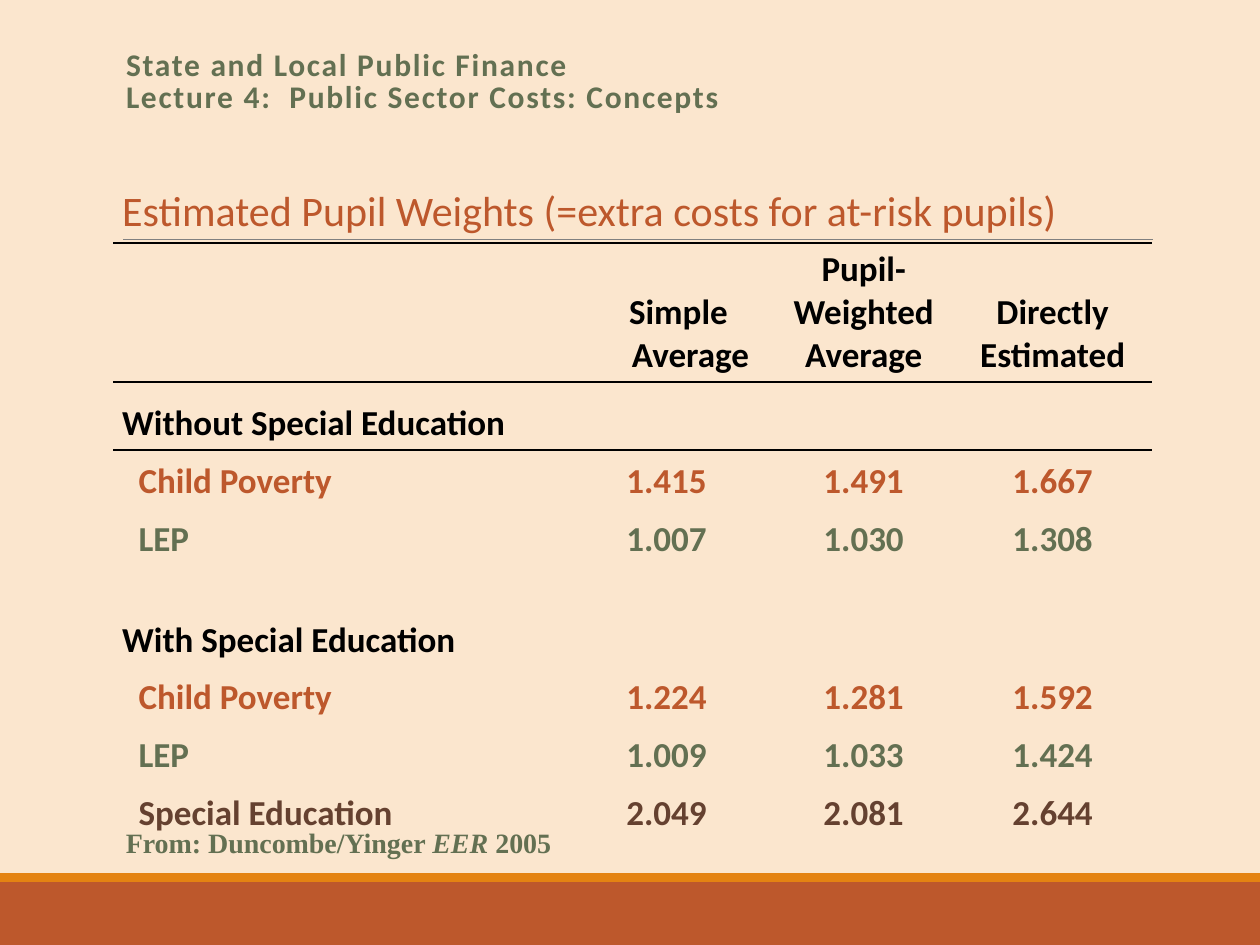
import pptx
import pptx.dml.color
import pptx.enum.shapes
import pptx.enum.text
import pptx.oxml.ns
import pptx.oxml.xmlchemy
import pptx.util

THEME = {
    "background": "FBE6CE",
    "rust": "BD582C",
    "orange": "E48312",
    "green": "637052",
    "brown": "654130",
    "black": "000000",
    "grey": "808080",
    "font": "Calibri",
    "source_font": "Times New Roman",
    "lecture_size": 18,
    "heading_size": 24,
    "table_size": 20,
    "source_size": 16,
}
ALIGN = pptx.enum.text.PP_ALIGN
ANCHOR = pptx.enum.text.MSO_ANCHOR


def theme_color(name):
    return pptx.dml.color.RGBColor.from_string(THEME[name])


def style(paragraph, size, color, bold=True, font="font"):
    paragraph.font.name = THEME[font]
    paragraph.font.size = pptx.util.Pt(THEME[size])
    paragraph.font.bold = bold
    paragraph.font.color.rgb = theme_color(color)


presentation = pptx.Presentation()
presentation.slide_width = pptx.util.Inches(10)
presentation.slide_height = pptx.util.Inches(7.5)
column = presentation.slide_width / 100
row = presentation.slide_height / 75
left, right = 9 * column, 91.5 * column

slide = presentation.slides.add_slide(presentation.slide_layouts[5])
slide.background.fill.solid()
slide.background.fill.fore_color.rgb = theme_color("background")

for top, height, color in ((70, 5, "rust"), (69.3, 0.7, "orange")):
    band = slide.shapes.add_shape(
        pptx.enum.shapes.MSO_SHAPE.RECTANGLE,
        0, int(top * row), presentation.slide_width, int(height * row))
    band.shadow.inherit = False
    band.fill.solid()
    band.fill.fore_color.rgb = theme_color(color)
    band.line.fill.background()

rule = slide.shapes.add_connector(
    pptx.enum.shapes.MSO_CONNECTOR.STRAIGHT,
    int(9.8 * column), int(19 * row), int(right), int(19 * row))
rule.line.color.rgb = theme_color("grey")
rule.line.width = pptx.util.Pt(0.5)
rule._element.spPr.append(pptx.oxml.xmlchemy.OxmlElement("a:effectLst"))

title = slide.shapes.title
title.left, title.top = int(left), int(3.3 * row)
title.width, title.height = int(right - left), int(6.5 * row)
title.text_frame.text = "State and Local Public Finance\vLecture 4:  Public Sector Costs: Concepts"
title.text_frame.auto_size = pptx.enum.text.MSO_AUTO_SIZE.NONE
title.text_frame.vertical_anchor = ANCHOR.MIDDLE
paragraph = title.text_frame.paragraphs[0]
paragraph.alignment = ALIGN.LEFT
paragraph.line_spacing = 0.85
style(paragraph, "lecture_size", "green")
for run in paragraph.runs:
    run._r.get_or_add_rPr().set("spc", "100")

rows = [
    ("heading", "rust", ["Estimated Pupil Weights (=extra costs for at-risk pupils)"]),
    ("header", "black", ["", "Simple Average", "Pupil-\nWeighted\nAverage", "Directly\nEstimated"]),
    ("group", "black", ["Without Special Education"]),
    ("item", "rust", ["Child Poverty", "1.415", "1.491", "1.667"]),
    ("item", "green", ["LEP", "1.007", "1.030", "1.308"]),
    ("group", "black", ["With Special Education"]),
    ("item", "rust", ["Child Poverty", "1.224", "1.281", "1.592"]),
    ("item", "green", ["LEP", "1.009", "1.033", "1.424"]),
    ("item", "brown", ["Special Education", "2.049", "2.081", "2.644"]),
]
column_widths = [35.4, 17, 14.3, 15.7]
row_heights = [5.1, 10.9, 5.4, 4.6, 4.6, 8, 4.6, 4.6, 4.6]

frame = slide.shapes.add_table(
    len(rows), len(column_widths), int(left), int(14.2 * row),
    int(sum(column_widths) * column), int(sum(row_heights) * row))
table = frame.table
table.first_row = False
table.horz_banding = False
style_id = table._tbl.tblPr.find(pptx.oxml.ns.qn("a:tableStyleId"))
style_id.text = "{2D5ABB26-0587-4C30-8999-92F81FD0307C}"
for table_column, width in zip(table.columns, column_widths):
    table_column.width = int(width * column)
for table_row, height in zip(table.rows, row_heights):
    table_row.height = int(height * row)

for row_index, (kind, color, texts) in enumerate(rows):
    span = {"heading": 4, "group": 2}.get(kind, 1)
    if span > 1:
        table.cell(row_index, 0).merge(table.cell(row_index, span - 1))
    for column_index in range(len(column_widths)):
        cell = table.cell(row_index, column_index)
        cell.vertical_anchor = ANCHOR.BOTTOM
        cell.margin_left = cell.margin_right = pptx.util.Inches(0.07)
        cell.margin_top = cell.margin_bottom = pptx.util.Inches(0.04)
        if kind == "item" and column_index == 0:
            cell.margin_left = pptx.util.Inches(0.2)
        if column_index < len(texts) and texts[column_index]:
            cell.text_frame.text = texts[column_index]
        for paragraph in cell.text_frame.paragraphs:
            paragraph.alignment = ALIGN.CENTER if column_index else ALIGN.LEFT
            size = "heading_size" if kind == "heading" else "table_size"
            style(paragraph, size, color, bold=kind != "heading")
        properties = cell._tc.get_or_add_tcPr()
        for edge, bordered_rows in (("a:lnT", (1, 2)), ("a:lnB", (0, 1))):
            if row_index in bordered_rows:
                border = pptx.oxml.xmlchemy.OxmlElement(edge)
                border.set("w", str(pptx.util.Pt(1)))
                fill = pptx.oxml.xmlchemy.OxmlElement("a:solidFill")
                border_color = pptx.oxml.xmlchemy.OxmlElement("a:srgbClr")
                border_color.set("val", THEME["black"])
                fill.append(border_color)
                border.append(fill)
                properties.append(border)
        cell.fill.background()

hanging = table.cell(1, 1).text_frame.paragraphs[0]._p.get_or_add_pPr()
hanging.set("marL", str(pptx.util.Inches(0.38)))
hanging.set("indent", str(pptx.util.Inches(-0.19)))

source = slide.shapes.add_textbox(
    int(left), int(65 * row), int(50.6 * column), int(5 * row))
source.text_frame.word_wrap = True
paragraph = source.text_frame.paragraphs[0]
style(paragraph, "source_size", "green", font="source_font")
for text, italic in (("From: Duncombe/Yinger ", False), ("EER", True), (" 2005", False)):
    run = paragraph.add_run()
    run.text = text
    run.font.italic = italic

presentation.save("out.pptx")
